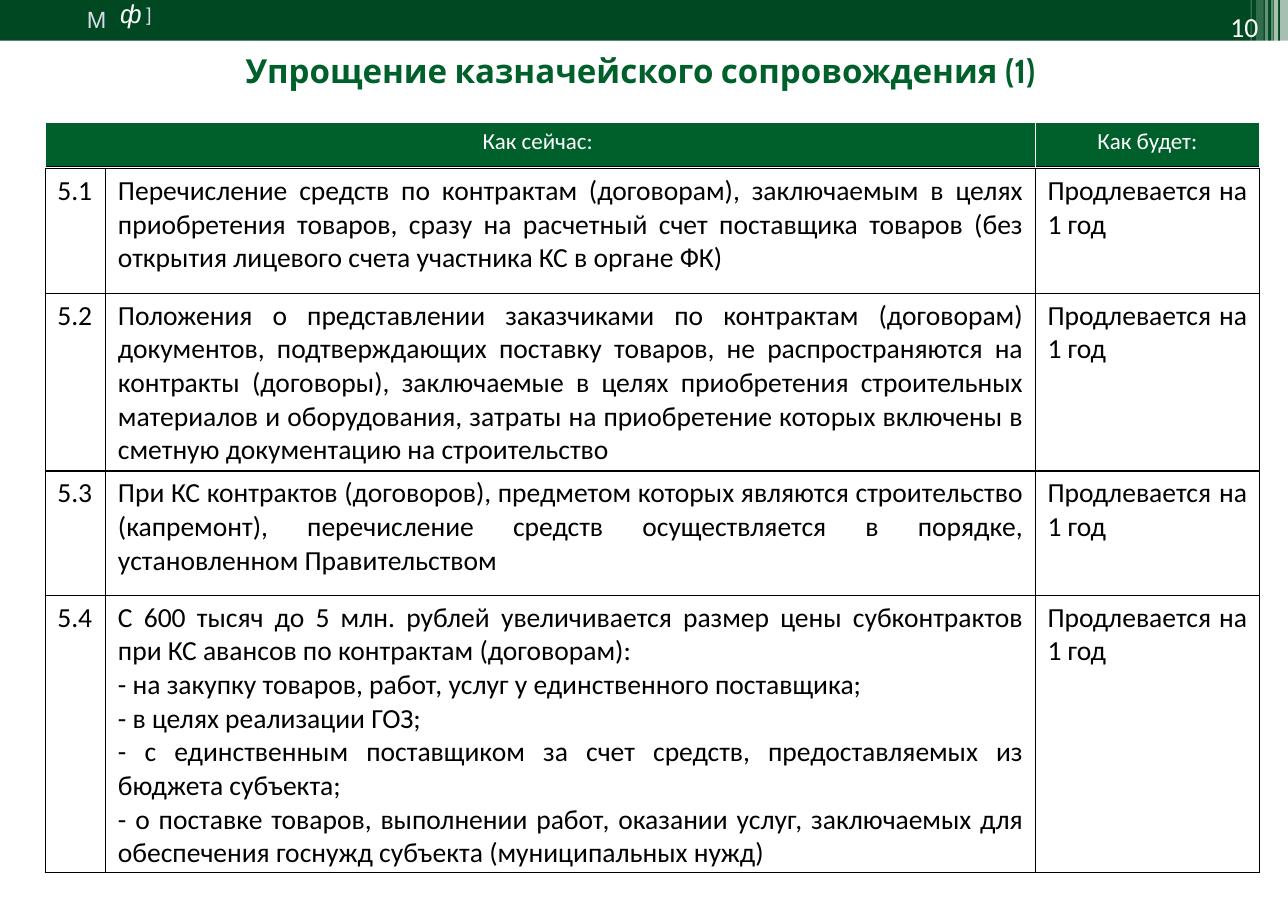
"""Slide on simplifying treasury support: header band, title and a table of changes."""
from lxml.etree import SubElement
from pptx import Presentation
from pptx.dml.color import RGBColor
from pptx.enum.shapes import MSO_SHAPE
from pptx.enum.text import PP_ALIGN as AL
from pptx.oxml.ns import qn
from pptx.util import Pt

PX = 9144
GREEN, WHITE, BLACK, PALE = "00602B", "FFFFFF", "000000", "DBDBE9"
rgb = RGBColor.from_string


def write(tf, lines, size, font, color, align, bold=False, italic=False):
    for i, line in enumerate(lines):
        p = tf.paragraphs[0] if i == 0 else tf.add_paragraph()
        p.alignment = align
        r = p.add_run()
        r.text = line
        f = r.font
        f.size, f.name, f.bold, f.italic = Pt(size), font, bold, italic
        f.color.rgb = rgb(color)


def add_grid(top, widths, heights, rows, size, color, align, fill, borders):
    frame = s.shapes.add_table(len(heights), len(widths), 41 * PX, top * PX,
                               sum(widths) * PX, sum(heights) * PX)
    tbl = frame.table
    tbl.first_row = tbl.horz_banding = False
    for col, w in zip(tbl.columns, widths):
        col.width = w * PX
    for row, h, texts in zip(tbl.rows, heights, rows):
        row.height = h * PX
        for cell, lines in zip(row.cells, texts):
            cell.margin_left = cell.margin_right = 11 * PX
            cell.margin_top = cell.margin_bottom = 5 * PX
            write(cell.text_frame, lines, size, "Calibri", color, align)
            tcPr = cell._tc.get_or_add_tcPr()
            for side, line_color in zip("LRTB", borders):
                ln = SubElement(tcPr, qn(f"a:ln{side}"), w=str(Pt(1)))
                solid = SubElement(ln, qn("a:solidFill"))
                SubElement(solid, qn("a:srgbClr"), val=line_color)
            if fill:
                cell.fill.solid()
                cell.fill.fore_color.rgb = rgb(fill)
            else:
                cell.fill.background()


prs = Presentation()
prs.slide_width, prs.slide_height = 1168 * PX, 826 * PX
s = prs.slides.add_slide(prs.slide_layouts[6])

bars = [
    (0, 1168, 37, "004821", 100),
    (1161, 7, 38, WHITE, 65),
    (1155, 4, 38, WHITE, 65),
    (1153, 1, 38, WHITE, 60),
    (1147, 3, 38, WHITE, 40),
    (1139, 7, 40, WHITE, 20),
    (1134, 1, 40, WHITE, 30),
]
for x, w, h, color, opacity in bars:
    sp = s.shapes.add_shape(MSO_SHAPE.RECTANGLE, x * PX, 0, w * PX, h * PX)
    sp.shadow.inherit = False
    sp.line.fill.background()
    sp.fill.solid()
    sp.fill.fore_color.rgb = rgb(color)
    if opacity < 100:
        clr = sp._element.spPr.find(qn("a:solidFill")).find(qn("a:srgbClr"))
        SubElement(clr, qn("a:alpha"), val=str(opacity * 1000))

labels = [
    (69, 0, 59, 46, "М", 15.3, "Arial", PALE, AL.LEFT, False, False),
    (123, -2, 25, 31, "]", 12.2, "Arial", PALE, AL.LEFT, False, False),
    (99, -7, 40, 38, "ф", 16.8, "Arial", WHITE, AL.LEFT, False, True),
    (0, 41, 1168, 46, "Упрощение казначейского сопровождения (1) ", 21.6, "Cabin",
     GREEN, AL.CENTER, True, False),
    (1044, 9, 97, 30, "10", 18, "Calibri", WHITE, AL.RIGHT, False, False),
]
for x, y, w, h, text, *style in labels:
    tf = s.shapes.add_textbox(x * PX, y * PX, w * PX, h * PX).text_frame
    tf.word_wrap = w > 60
    if text == "10":
        tf.margin_left = tf.margin_right = tf.margin_top = tf.margin_bottom = 0
    write(tf, [text], *style)

add_grid(111, [898, 203], [40], [[["Как сейчас: "], ["Как будет:"]]],
         15, WHITE, AL.CENTER, GREEN, [WHITE, WHITE, WHITE, BLACK])

measures = [
    ["Перечисление средств по контрактам (договорам), заключаемым в целях приобретения "
     "товаров, сразу на расчетный счет поставщика товаров (без открытия лицевого счета "
     "участника КС в органе ФК)"],
    ["Положения о представлении заказчиками по контрактам (договорам) документов, "
     "подтверждающих поставку товаров, не распространяются на контракты (договоры), "
     "заключаемые в целях приобретения строительных материалов и оборудования, затраты "
     "на приобретение которых включены в сметную документацию на строительство"],
    ["При КС контрактов (договоров), предметом которых являются строительство "
     "(капремонт), перечисление средств осуществляется в порядке, установленном "
     "Правительством "],
    ["С 600 тысяч до 5 млн. рублей увеличивается размер цены субконтрактов при КС "
     "авансов по контрактам (договорам):",
     "- на закупку товаров, работ, услуг у единственного поставщика; ",
     "- в целях реализации ГОЗ;",
     "- с единственным поставщиком за счет средств, предоставляемых из бюджета субъекта;",
     "- о поставке товаров, выполнении работ, оказании услуг, заключаемых для "
     "обеспечения госнужд субъекта (муниципальных нужд)"],
]
rows = [[[f"5.{n}"], lines, ["Продлевается на 1 год"]]
        for n, lines in enumerate(measures, 1)]
add_grid(153, [55, 843, 203], [113, 161, 113, 251], rows,
         18, BLACK, AL.JUSTIFY, None, [BLACK] * 4)

prs.save("out.pptx")
